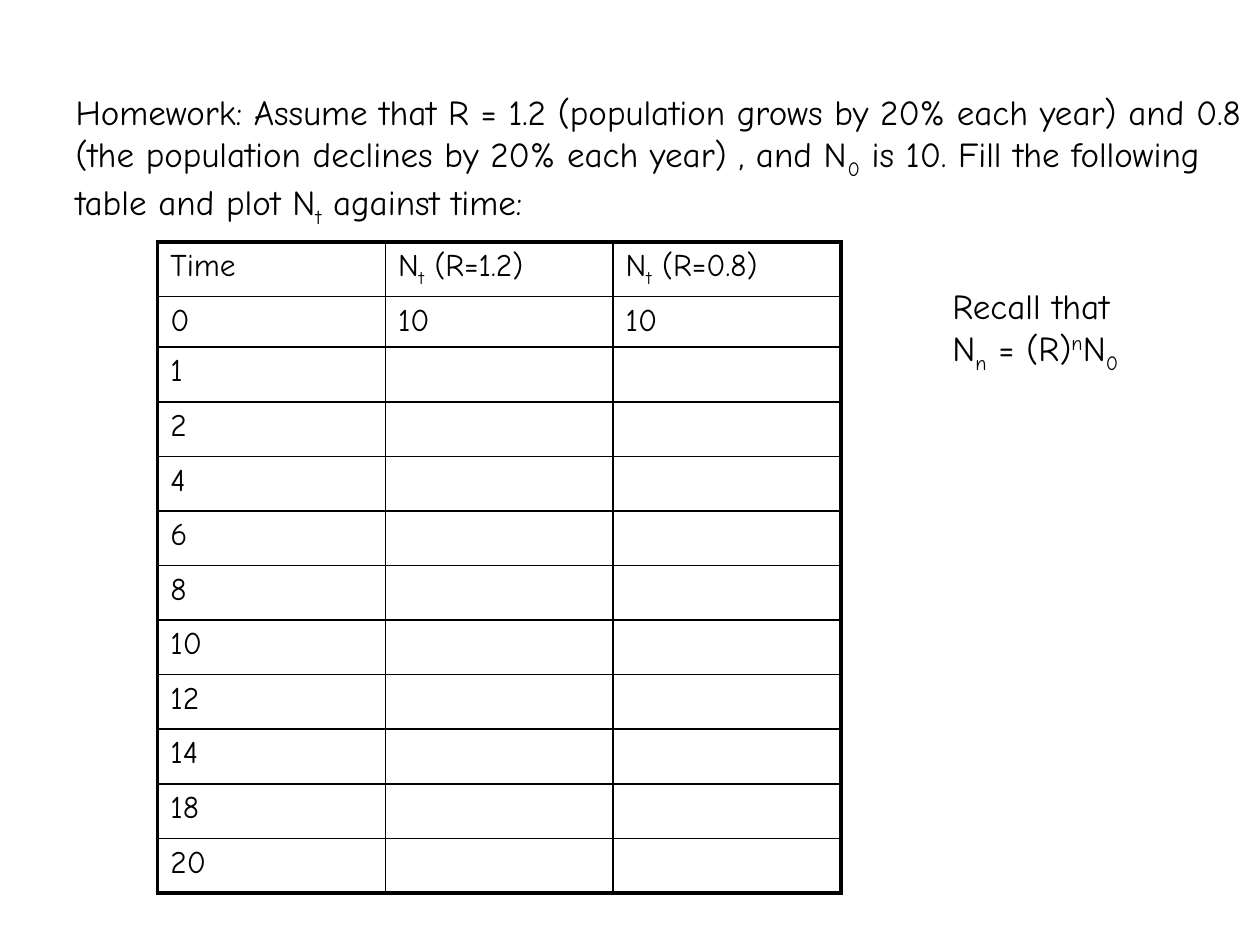
from lxml import etree
from pptx import Presentation
from pptx import oxml
from pptx import util as u
from pptx.dml.color import RGBColor
from pptx.enum import text
from pptx.oxml import ns

FONT = "Comic Neue"
COLORS = {"ink": "000000", "paper": "FFFFFF"}
SUB, SUPER = -25, 30
THICK, THIN = 2.25, 1
TIMES = [0, 1, 2, 4, 6, 8, 10, 12, 14, 18, 20]
COLUMN_WIDTH, ROW_HEIGHT, START_ROW_HEIGHT = 4.59, 1.1, 1.02


def add_runs(paragraph, runs, size):
    """Add (words, baseline) pairs to a paragraph, run by run."""
    paragraph.alignment = text.PP_ALIGN.LEFT
    for words, baseline in runs:
        run = paragraph.add_run()
        run.text = words
        run.font.name = FONT
        run.font.size = u.Pt(size)
        run.font.color.rgb = RGBColor.from_string(COLORS["ink"])
        if baseline:
            run._r.get_or_add_rPr().set("baseline", str(baseline * 1000))


def add_assignment(slide):
    """Write the homework task in the title placeholder."""
    title = slide.shapes.title
    title.left, title.top = u.Cm(1.27), u.Cm(1.7)
    title.width, title.height = u.Cm(24.13), u.Cm(3.2)
    frame = title.text_frame
    frame.word_wrap = True
    frame.auto_size = text.MSO_AUTO_SIZE.NONE
    frame.vertical_anchor = text.MSO_ANCHOR.TOP
    add_runs(frame.paragraphs[0], [
        ("Homework: Assume that R = 1.2 (population grows by 20% each year) and 0.8 "
         "(the population declines by 20% each year) , and N", 0),
        ("0", SUB),
        (" is 10. Fill the following table and plot N", 0),
        ("t", SUB),
        (" against time:", 0),
    ], 20)


def set_space_before(paragraph, percent):
    """Set the space before a paragraph as a share of its line."""
    spacing = etree.SubElement(paragraph._p.get_or_add_pPr(), ns.qn("a:spcBef"))
    etree.SubElement(spacing, ns.qn("a:spcPct")).set("val", str(percent * 1000))


def set_borders(cell, widths):
    """Draw the left, right, top and bottom borders of a cell."""
    properties = cell._tc.get_or_add_tcPr()
    for position, (side, width) in enumerate(zip("LRTB", widths)):
        properties.insert(position, oxml.parse_xml(
            f'<a:ln{side} {ns.nsdecls("a")} w="{u.Pt(width)}"><a:solidFill>'
            f'<a:srgbClr val="{COLORS["ink"]}"/></a:solidFill></a:ln{side}>'))


def add_population_table(slide):
    """Add the table of times and population sizes to fill in."""
    header = [[("Time", 0)]] + [
        [("N", 0), ("t", SUB), (f" (R={rate})", 0)] for rate in ("1.2", "0.8")]
    rows = [header] + [[[(str(time), 0)], [], []] for time in TIMES]
    rows[1][1] = rows[1][2] = [("10", 0)]
    last_row, last_column = len(rows) - 1, len(header) - 1
    table = slide.shapes.add_table(
        len(rows), len(header), u.Cm(3.18), u.Cm(4.88),
        u.Cm(COLUMN_WIDTH * len(header)), u.Cm(ROW_HEIGHT * len(rows))).table
    table.first_row = table.horz_banding = False
    for column in table.columns:
        column.width = u.Cm(COLUMN_WIDTH)
    for r, row in enumerate(rows):
        table.rows[r].height = u.Cm(START_ROW_HEIGHT if r == 1 else ROW_HEIGHT)
        for c, runs in enumerate(row):
            cell = table.cell(r, c)
            cell.fill.background()
            outer = (c == 0, c == last_column, r == 0, r == last_row)
            set_borders(cell, [THICK if edge else THIN for edge in outer])
            if runs:
                paragraph = cell.text_frame.paragraphs[0]
                set_space_before(paragraph, 20)
                add_runs(paragraph, runs, 18)


def add_reminder(slide):
    """Add the growth formula beside the table."""
    box = slide.shapes.add_textbox(u.Cm(18.95), u.Cm(5.61), u.Cm(4.32), u.Cm(2.24))
    frame = box.text_frame
    frame.word_wrap = False
    add_runs(frame.paragraphs[0], [("Recall that", 0)], 20)
    add_runs(frame.add_paragraph(), [
        ("N", 0), ("n", SUB), (" = (R)", 0), ("n", SUPER), ("N", 0), ("0", SUB)], 20)


def main():
    """Build and save the homework slide."""
    presentation = Presentation()
    presentation.slide_width, presentation.slide_height = u.Cm(25.4), u.Cm(19.05)
    slide = presentation.slides.add_slide(presentation.slide_layouts.get_by_name("Title Only"))
    fill = slide.background.fill
    fill.solid()
    fill.fore_color.rgb = RGBColor.from_string(COLORS["paper"])
    add_assignment(slide)
    add_population_table(slide)
    add_reminder(slide)
    presentation.save("out.pptx")


if __name__ == "__main__":
    main()
